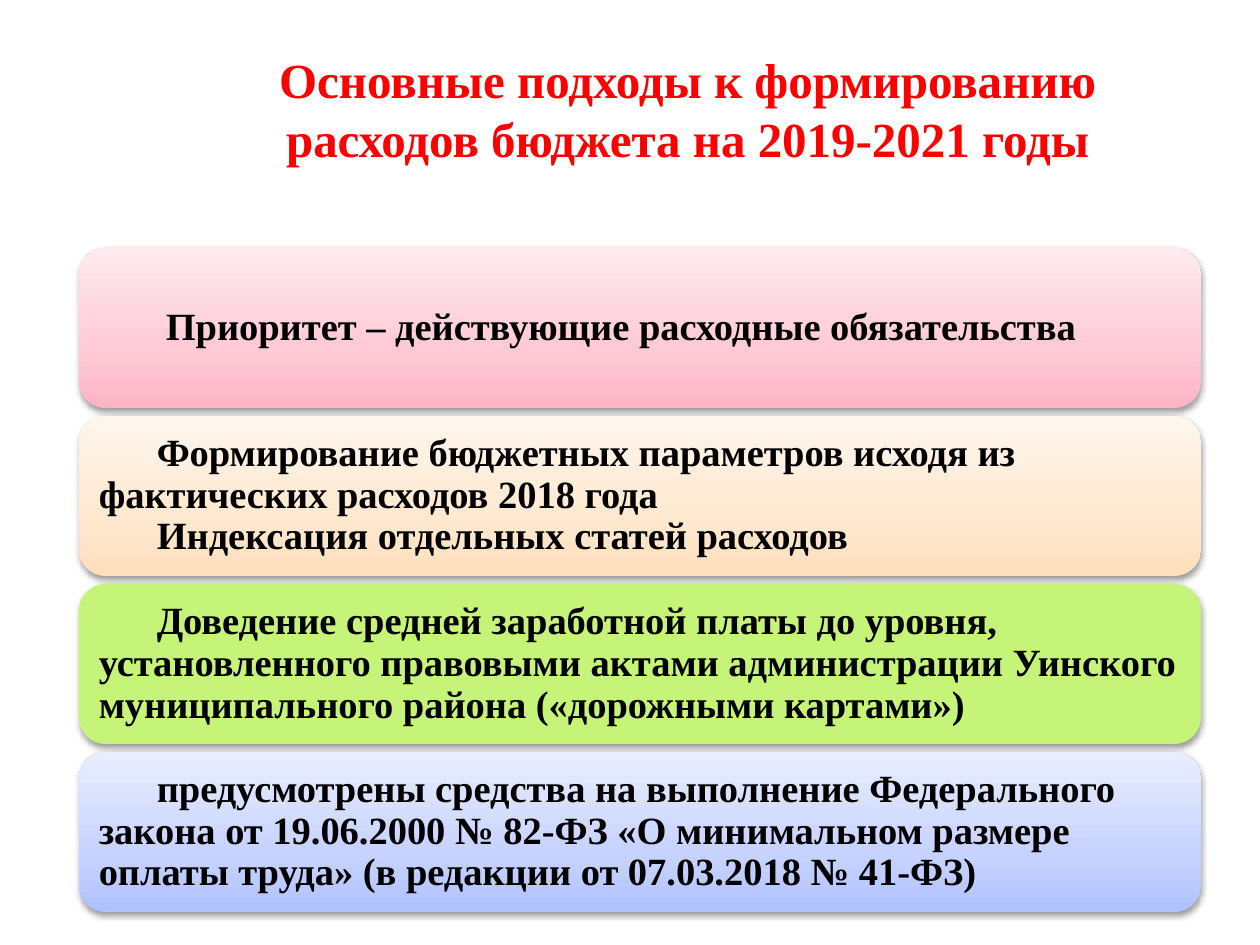
from lxml.etree import SubElement
from pptx import Presentation
from pptx.dml.color import RGBColor
from pptx.enum.shapes import MSO_SHAPE
from pptx.enum.text import MSO_ANCHOR, PP_ALIGN
from pptx.oxml.ns import qn
from pptx.util import Pt

PX = 914400 / 126
RED = RGBColor(0xFF, 0x00, 0x00)
BLACK = RGBColor(0x00, 0x00, 0x00)
PINK = [RGBColor(0xFF, 0xB3, 0xC6), RGBColor(0xFF, 0xC9, 0xD6), RGBColor(0xFF, 0xEB, 0xEF)]
PEACH = [RGBColor(0xFF, 0xDF, 0xBC), RGBColor(0xFF, 0xE8, 0xD0), RGBColor(0xFF, 0xF6, 0xED)]
GREEN = [RGBColor(0xC5, 0xF4, 0x78)]
BLUE = [RGBColor(0xB0, 0xC1, 0xFF), RGBColor(0xC6, 0xD2, 0xFF), RGBColor(0xE9, 0xEE, 0xFF)]
STOPS = (0, 35, 100)

CARDS = [
    (PINK, 67, ["Приоритет – действующие расходные обязательства"]),
    (PEACH, 58, ["Формирование бюджетных параметров исходя из фактических расходов 2018 года",
                 "Индексация отдельных статей расходов"]),
    (GREEN, 58, ["Доведение средней заработной платы до уровня, установленного правовыми "
                 "актами администрации Уинского муниципального района («дорожными картами»)"]),
    (BLUE, 58, ["предусмотрены средства на выполнение Федерального закона от 19.06.2000 "
                "№ 82-ФЗ «О минимальном размере оплаты труда» (в редакции от 07.03.2018 № 41-ФЗ)"]),
]


def px(n):
    return round(n * PX)


class Deck:
    font = "Times New Roman"

    def __init__(self, prs):
        self.s = prs.slides.add_slide(prs.slide_layouts[5])

    def run(self, p, text, size, color):
        r = p.add_run()
        r.text = text
        r.font.name = self.font
        r.font.size = Pt(size)
        r.font.bold = True
        r.font.color.rgb = color

    def title(self, x, y, w, h, text):
        sp = self.s.shapes.title
        sp.left, sp.top, sp.width, sp.height = px(x), px(y), px(w), px(h)
        tf = sp.text_frame
        tf.vertical_anchor = MSO_ANCHOR.MIDDLE
        p = tf.paragraphs[0]
        p.alignment = PP_ALIGN.CENTER
        self.run(p, text, 28, RED)

    def fill(self, sp, colors):
        if len(colors) == 1:
            sp.fill.solid()
            sp.fill.fore_color.rgb = colors[0]
            return
        sp.fill.gradient()
        sp.fill.gradient_angle = 90
        stops = sp._element.spPr.find(".//" + qn("a:gsLst"))
        stops.clear()
        for pos, color in zip(STOPS, colors):
            gs = SubElement(stops, qn("a:gs"), pos=str(pos * 1000))
            SubElement(gs, qn("a:srgbClr"), val=str(color))

    def shadow(self, sp):
        sp.shadow.inherit = False
        effects = sp._element.spPr.find(qn("a:effectLst"))
        outer = SubElement(effects, qn("a:outerShdw"), blurRad="40000", dist="20000",
                           dir="5400000", rotWithShape="0")
        color = SubElement(outer, qn("a:srgbClr"), val=str(BLACK))
        SubElement(color, qn("a:alpha"), val="38000")

    def card(self, x, y, w, h, colors, indent, lines):
        sp = self.s.shapes.add_shape(MSO_SHAPE.ROUNDED_RECTANGLE, px(x), px(y), px(w), px(h))
        self.fill(sp, colors)
        sp.line.fill.background()
        self.shadow(sp)
        tf = sp.text_frame
        tf.word_wrap = True
        tf.vertical_anchor = MSO_ANCHOR.MIDDLE
        tf.margin_left = tf.margin_right = px(12)
        tf.margin_top = tf.margin_bottom = 0
        for i, line in enumerate(lines):
            p = tf.add_paragraph() if i else tf.paragraphs[0]
            p.alignment = PP_ALIGN.LEFT
            p.line_spacing = 0.9
            p._p.get_or_add_pPr().set("indent", str(px(indent)))
            self.run(p, line, 22, BLACK)


def main():
    prs = Presentation()
    prs.slide_width, prs.slide_height = px(1260), px(945)
    deck = Deck(prs)
    deck.title(168, 29, 1039, 158, "Основные подходы к формированию расходов бюджета на 2019-2021 годы")
    height, gap = 160, 8
    for i, (colors, indent, lines) in enumerate(CARDS):
        deck.card(79, 248 + i * (height + gap), 1122, height, colors, indent, lines)
    prs.save("out.pptx")


if __name__ == "__main__":
    main()
